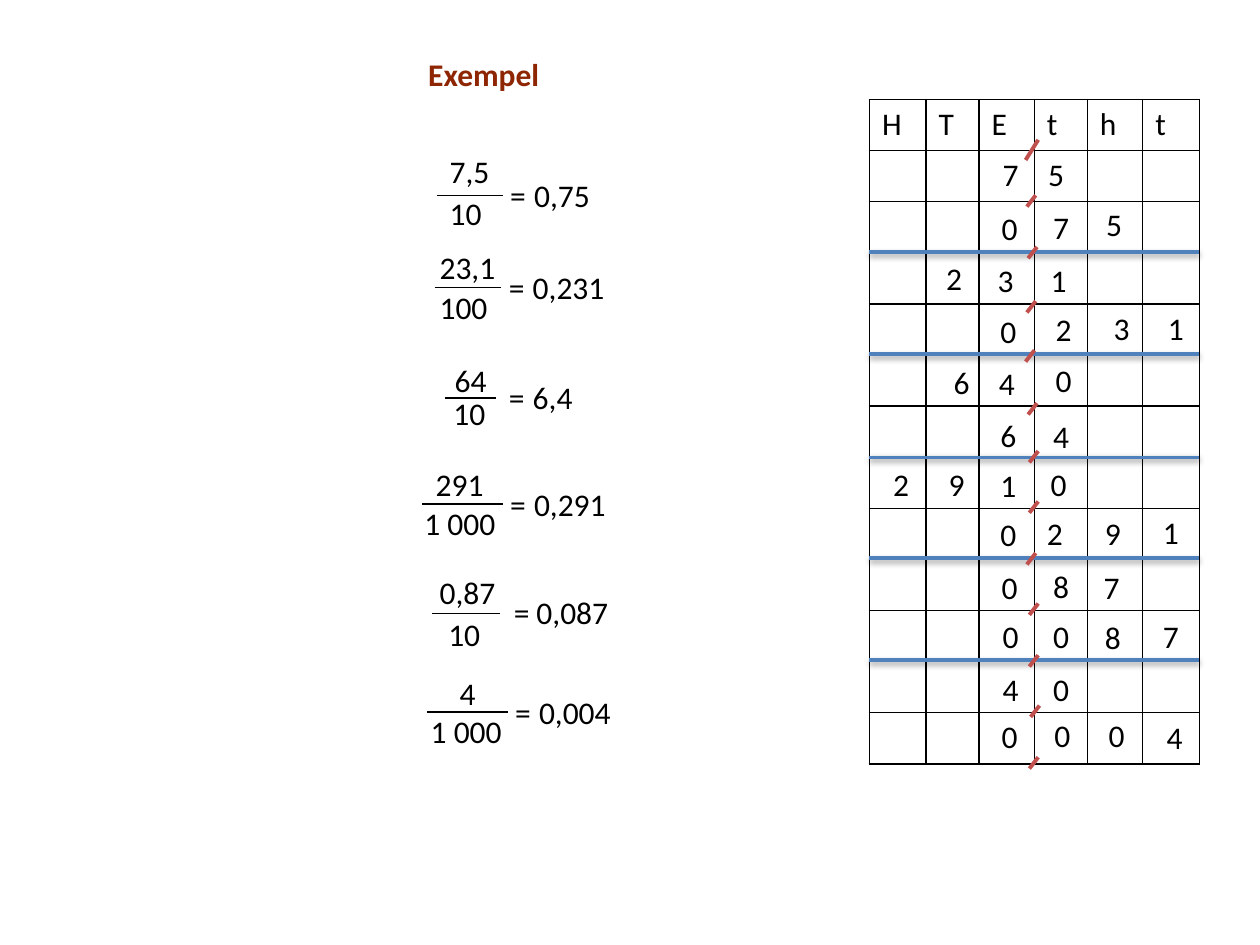
from dataclasses import dataclass

import pptx
import pptx.dml.color
import pptx.enum.shapes
import pptx.enum.text
import pptx.oxml
import pptx.oxml.ns
import pptx.util
from pptx.util import Inches


@dataclass(frozen=True)
class Theme:
    font: str = "Calibri"
    size: float = 18
    black: str = "000000"
    white: str = "FFFFFF"
    title: str = "8E2503"
    separator: str = "4F81BD"
    comma: str = "C0504D"


@dataclass(frozen=True)
class Label:
    text: str
    left: float
    top: float
    width: float
    wrap: bool = True


@dataclass(frozen=True)
class Example:
    numerator: Label
    denominator: Label
    bar: tuple[float, float, float]  # left, right, y
    equals: tuple[float, float]
    result: Label


THEME = Theme()
LINE_HEIGHT = 0.4
DIGIT_WIDTH = 0.29
TABLE_LEFT, TABLE_TOP = 6.9, 0.79
TABLE_RIGHT = 9.52
ROW_COUNT, ROW_HEIGHT = 13, 0.405
HEADINGS = "HTEtht"
COLUMN_WIDTHS = [0.45, 0.42, 0.44, 0.42, 0.44, 0.45]
SEPARATORS = [2, 2.81, 3.63, 4.43, 5.24]

# Decimal commas: right and top of each slanted stroke
COMMA_WIDTH, COMMA_HEIGHT = 0.07, 0.09
COMMAS = [(8.22, 1.55), (8.23, 1.96), (8.22, 2.39), (8.21, 2.78), (8.23, 3.2), (8.24, 3.58),
          (8.24, 3.98), (8.22, 4.39), (8.24, 4.79), (8.24, 5.2), (8.25, 5.6), (8.24, 6.01)]

# Hand-placed digits, one list per table row: digit, left, top
DIGIT_ROWS = [
    [("7", 7.86, 1.18), ("5", 8.22, 1.18)],
    [("0", 7.85, 1.61), ("7", 8.26, 1.6), ("5", 8.68, 1.58)],
    [("2", 7.41, 2.01), ("3", 7.82, 2.02), ("1", 8.24, 2.02)],
    [("0", 7.84, 2.43), ("2", 8.28, 2.41), ("3", 8.74, 2.4), ("1", 9.17, 2.4)],
    [("6", 7.47, 2.83), ("4", 7.83, 2.84), ("0", 8.28, 2.82)],
    [("6", 7.84, 3.25), ("4", 8.26, 3.26)],
    [("2", 6.99, 3.64), ("9", 7.43, 3.64), ("1", 7.84, 3.65), ("0", 8.24, 3.64)],
    [("0", 7.84, 4.04), ("2", 8.21, 4.03), ("9", 8.67, 4.03), ("1", 9.13, 4.02)],
    [("0", 7.85, 4.46), ("8", 8.26, 4.45), ("7", 8.66, 4.46)],
    [("0", 7.86, 4.85), ("0", 8.26, 4.85), ("8", 8.67, 4.86), ("7", 9.13, 4.85)],
    [("4", 7.86, 5.27), ("0", 8.26, 5.27)],
    [("0", 7.85, 5.64), ("0", 8.27, 5.63), ("0", 8.7, 5.63), ("4", 9.16, 5.65)],
]

EXAMPLES = [
    Example(Label("7,5", 3.47, 1.16, 0.52, False), Label("10", 3.47, 1.49, 0.46, False),
            (3.47, 3.99, 1.55), (3.95, 1.35), Label("0,75", 4.14, 1.35, 0.65, False)),
    Example(Label("23,1", 3.39, 1.92, 0.65, False), Label("100", 3.39, 2.24, 0.59, False),
            (3.45, 3.98, 2.28), (3.94, 2.08), Label("0,231", 4.13, 2.08, 0.96)),
    Example(Label("64", 3.51, 2.82, 0.46, False), Label("10", 3.5, 3.08, 0.46, False),
            (3.53, 3.94, 3.16), (3.94, 2.95), Label("6,4", 4.13, 2.95, 0.96)),
    Example(Label("291", 3.36, 3.64, 0.59, False), Label("1 000", 3.27, 3.95, 0.8),
            (3.35, 3.99, 4), (3.95, 3.8), Label("0,291", 4.14, 3.8, 0.96)),
    Example(Label("0,87", 3.39, 4.5, 0.65, False), Label("10", 3.46, 4.83, 0.47),
            (3.43, 3.97, 4.87), (3.98, 4.66), Label("0,087", 4.16, 4.66, 0.96)),
    Example(Label("4", 3.55, 5.3, 0.33, False), Label("1 000", 3.32, 5.6, 0.79),
            (3.39, 4.03, 5.65), (3.99, 5.45), Label("0,004", 4.18, 5.45, 0.96)),
]


def rgb(value: str) -> pptx.dml.color.RGBColor:
    return pptx.dml.color.RGBColor.from_string(value)


def style_font(para, color: str = THEME.black, bold: bool = False) -> None:
    para.font.name = THEME.font
    para.font.size = pptx.util.Pt(THEME.size)
    para.font.color.rgb = rgb(color)
    para.font.bold = bold


def add_label(shapes, label: Label, color: str = THEME.black, bold: bool = False) -> None:
    box = shapes.add_textbox(Inches(label.left), Inches(label.top),
                             Inches(label.width), Inches(LINE_HEIGHT))
    frame = box.text_frame
    frame.word_wrap = label.wrap
    frame.auto_size = pptx.enum.text.MSO_AUTO_SIZE.SHAPE_TO_FIT_TEXT
    frame.text = label.text
    style_font(frame.paragraphs[0], color, bold)


def add_line(shapes, start: tuple[float, float], end: tuple[float, float],
             color: str, width: float, shadow: bool = False) -> None:
    line = shapes.add_connector(pptx.enum.shapes.MSO_CONNECTOR.STRAIGHT,
                                *map(Inches, start), *map(Inches, end))
    line.line.color.rgb = rgb(color)
    line.line.width = pptx.util.Pt(width)
    effect = ('<a:outerShdw blurRad="40000" dist="20000" dir="5400000" rotWithShape="0">'
              f'<a:srgbClr val="{THEME.black}"><a:alpha val="38000"/></a:srgbClr>'
              '</a:outerShdw>') if shadow else ""
    line._element.spPr.append(pptx.oxml.parse_xml(
        f'<a:effectLst {pptx.oxml.ns.nsdecls("a")}>{effect}</a:effectLst>'))


def style_cell(cell) -> None:
    properties = cell._tc.get_or_add_tcPr()
    for side in ("lnL", "lnR", "lnT", "lnB"):
        properties.append(pptx.oxml.parse_xml(
            f'<a:{side} {pptx.oxml.ns.nsdecls("a")} w="12700"><a:solidFill>'
            f'<a:srgbClr val="{THEME.black}"/></a:solidFill></a:{side}>'))
    cell.fill.solid()
    cell.fill.fore_color.rgb = rgb(THEME.white)
    style_font(cell.text_frame.paragraphs[0])


def add_place_value_table(shapes) -> None:
    table = shapes.add_table(ROW_COUNT, len(HEADINGS), Inches(TABLE_LEFT), Inches(TABLE_TOP),
                             Inches(sum(COLUMN_WIDTHS)), Inches(ROW_COUNT * ROW_HEIGHT)).table
    table.first_row = table.horz_banding = False
    for column, width in zip(table.columns, COLUMN_WIDTHS):
        column.width = Inches(width)
    for row in table.rows:
        row.height = Inches(ROW_HEIGHT)
    for column, heading in enumerate(HEADINGS):
        table.cell(0, column).text = heading
    for cell in table.iter_cells():
        style_cell(cell)


def add_example(shapes, example: Example) -> None:
    group = shapes.add_group_shape().shapes
    add_label(group, example.numerator)
    add_label(group, example.denominator)
    left, right, y = example.bar
    add_line(group, (left, y), (right, y), THEME.black, 0.75)
    add_label(group, Label("=", *example.equals, 0.34))
    add_label(shapes, example.result)


def main() -> None:
    deck = pptx.Presentation()
    deck.slide_width, deck.slide_height = Inches(10), Inches(7.5)
    page = deck.slides.add_slide(deck.slide_layouts[6])
    shapes = page.shapes

    # Place value table with its separators and decimal commas
    add_place_value_table(shapes)
    add_line(shapes, (8.24, 1.11), (8.14, 1.27), THEME.comma, 2.25)
    for y in SEPARATORS:
        add_line(shapes, (TABLE_LEFT, y), (TABLE_RIGHT, y), THEME.separator, 2, shadow=True)
    for right, top in COMMAS:
        add_line(shapes, (right, top), (right - COMMA_WIDTH, top + COMMA_HEIGHT),
                 THEME.comma, 2.25)

    # Digits over the table
    for row in DIGIT_ROWS:
        for digit, left, top in row:
            add_label(shapes, Label(digit, left, top, DIGIT_WIDTH))

    # Heading and worked examples
    add_label(shapes, Label("Exempel", 3.3, 0.39, 1.09, False), THEME.title, bold=True)
    for example in EXAMPLES:
        add_example(shapes, example)

    deck.save("out.pptx")


if __name__ == "__main__":
    main()
